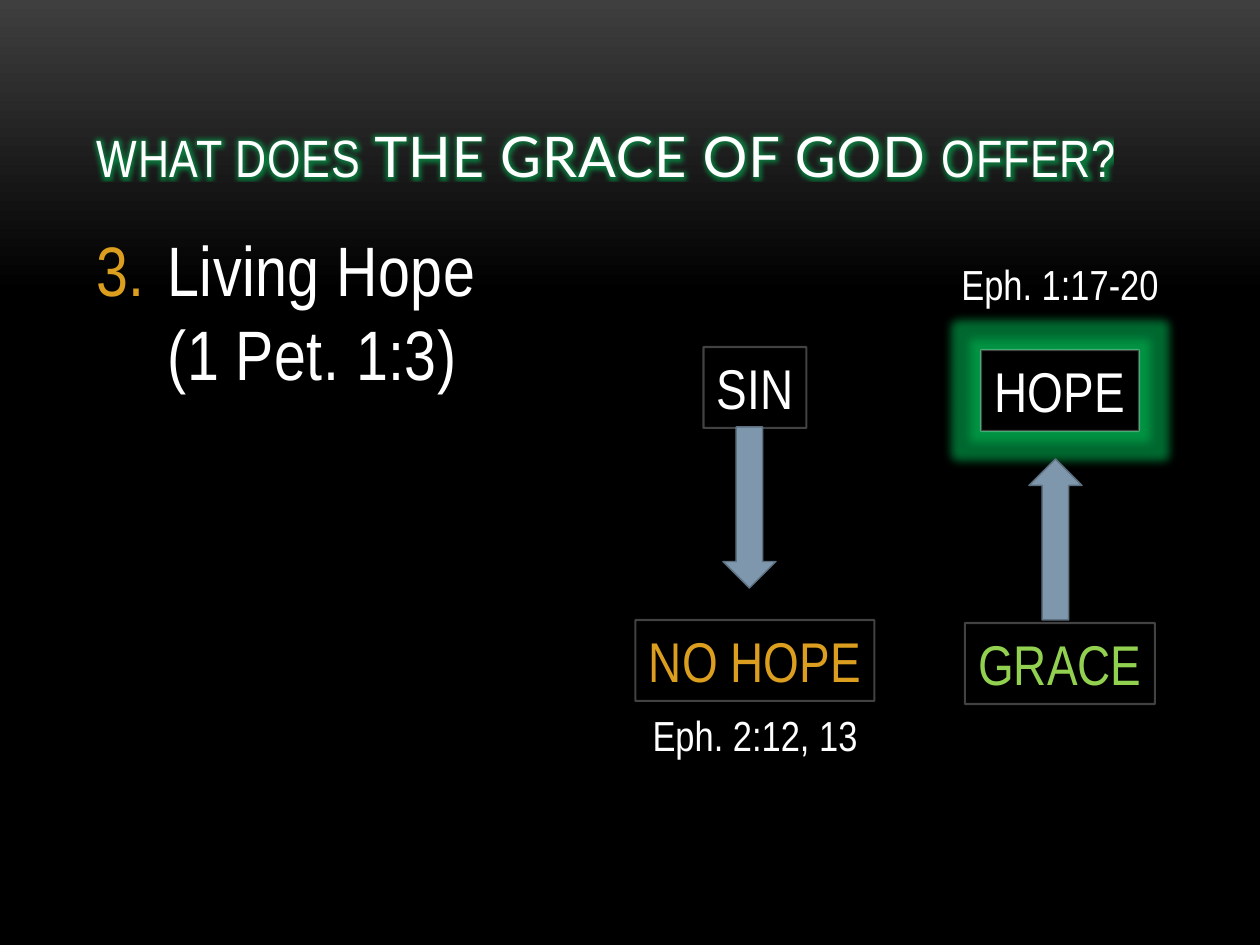
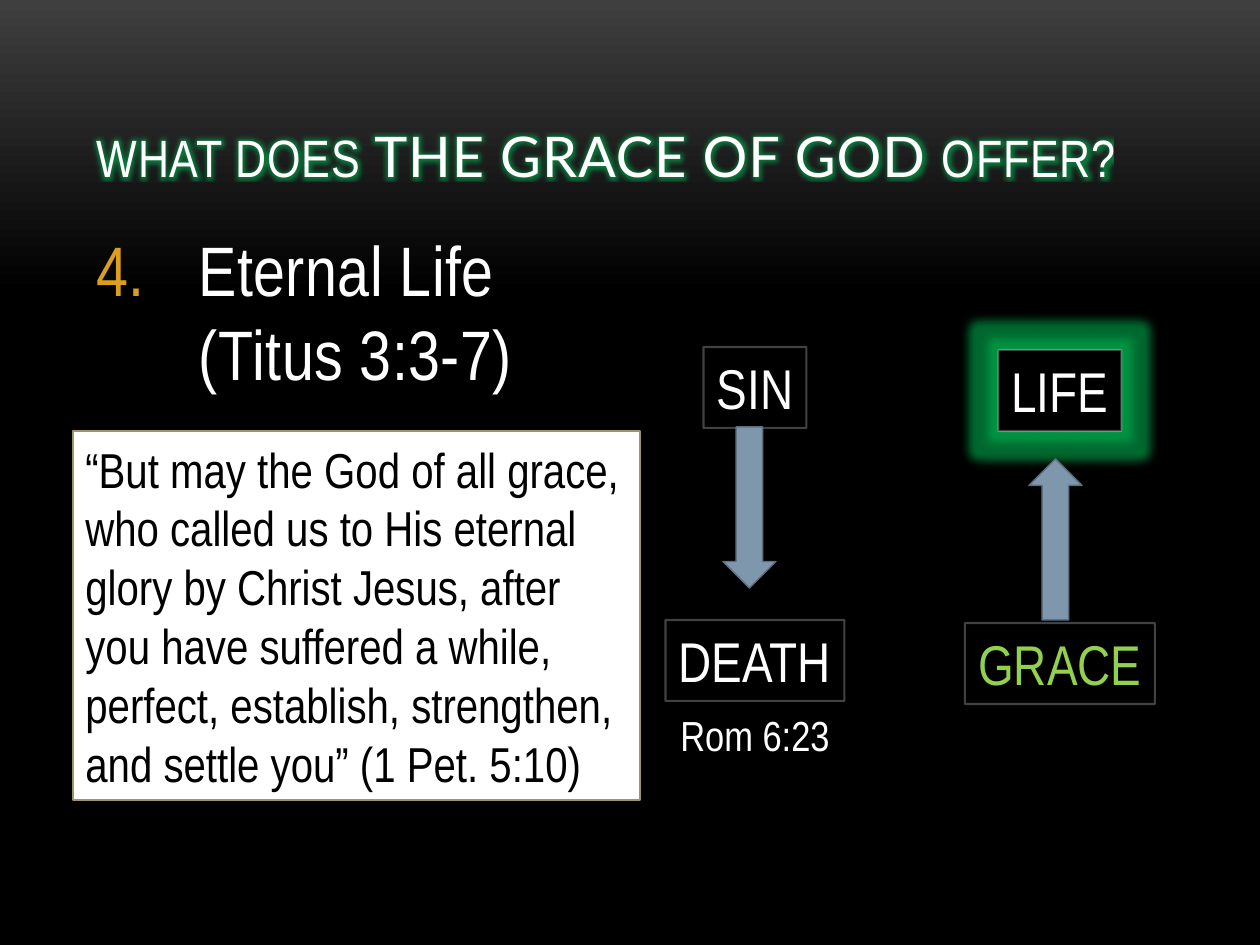
from lxml.etree import SubElement as Sub
from pptx import Presentation
from pptx.dml.color import RGBColor as RGB
from pptx.enum.shapes import MSO_SHAPE as Geo
from pptx.enum.text import MSO_ANCHOR as Anchor, MSO_AUTO_SIZE as Auto, PP_ALIGN as Align
from pptx.oxml.ns import qn
from pptx.util import Emu, Pt

PX = 914400 / 126
WHITE = RGB(0xFF, 0xFF, 0xFF)
BLACK = RGB(0x00, 0x00, 0x00)
GRAY = RGB(0x3F, 0x3F, 0x3F)
GOLD = RGB(0xDC, 0x9E, 0x1F)
LIME = RGB(0x92, 0xD0, 0x50)
GREEN = RGB(0x00, 0xB0, 0x50)
STEEL = RGB(0x7E, 0x97, 0xAD)
SLATE = RGB(0x5D, 0x70, 0x80)
SAND = RGB(0x9D, 0x93, 0x6F)
FACE = "Arial Narrow"
LEFT, RIGHT = 755, 1060


def px(*nums):
    return [Emu(round(n * PX)) for n in nums]


def glow(effect, rad):
    node = Sub(effect, qn("a:glow"), rad=str(Pt(rad)))
    tint = Sub(node, qn("a:srgbClr"), val=str(GREEN))
    Sub(tint, qn("a:alpha"), val="60000")


prs = Presentation()
prs.slide_width, prs.slide_height = px(1260, 945)

fill = prs.slide_master.background.fill
fill.gradient()
fill.gradient_angle = 270
for stop, color, pos in zip(fill.gradient_stops, (GRAY, BLACK), (0, 0.31)):
    stop.color.rgb = color
    stop.position = pos

layout = prs.slide_layouts[1]
areas = ((84, 38, 1092, 157), Anchor.BOTTOM), ((84, 220, 557, 567), Anchor.TOP)
for holder, (area, anchor) in zip(layout.placeholders, areas):
    holder.left, holder.top, holder.width, holder.height = px(*area)
    holder.text_frame.vertical_anchor = anchor
    holder.text_frame.auto_size = Auto.NONE

TITLE = [("WHAT DOES ", 30, FACE), ("THE GRACE OF GOD ", 32, "Lato"), ("OFFER?", 30, FACE)]
QUOTE = ("“But may the God of all grace, who called us to His eternal glory by Christ Jesus, "
         "after you have suffered a while, perfect, establish, strengthen, and settle you” "
         "(1 Pet. 5:10)")
SLIDES = [
    dict(start=3, indent=71, lines=("Living Hope ", "(1 Pet. 1:3)"),
         low=("NO HOPE", 239, GOLD), high=("HOPE", 158),
         notes=[("Eph. 2:12, 13", LEFT, 703, 233), ("Eph. 1:17-20", RIGHT, 252, 226)],
         quote=None),
    dict(start=4, indent=102, lines=("Eternal Life ", "(Titus 3:3-7)"),
         low=("DEATH", 179, WHITE), high=("LIFE", 123),
         notes=[("Rom 6:23", LEFT, 703, 176)],
         quote=QUOTE),
]

for data in SLIDES:
    slide = prs.slides.add_slide(layout)
    shapes = slide.shapes
    title, body = slide.placeholders

    para = title.text_frame.paragraphs[0]
    para.alignment = Align.LEFT
    para.font.color.rgb = WHITE
    for text, size, face in TITLE:
        run = para.add_run()
        run.text = text
        run.font.size = Pt(size)
        run.font.name = face
        props = run.font._element
        props.set("spc", "50")
        effect = Sub(props, qn("a:effectLst"))
        props.insert(0, effect)
        glow(effect, 5)

    para = body.text_frame.paragraphs[0]
    first, last = data["lines"]
    para.add_run().text = first
    para.add_line_break()
    para.add_run().text = last
    para.space_before = Pt(0)
    para.space_after = Pt(6)
    props = para._p.get_or_add_pPr()
    hang = px(data["indent"])[0]
    props.set("marL", str(hang))
    props.set("indent", str(-hang))
    Sub(Sub(props, qn("a:buClr")), qn("a:srgbClr"), val=str(GOLD))
    Sub(props, qn("a:buFont"), typeface=FACE)
    Sub(props, qn("a:buAutoNum"), type="arabicPeriod", startAt=str(data["start"]))
    para.font.size = Pt(40)
    para.font.name = FACE
    para.font.color.rgb = WHITE
    para.font._element.set("spc", "30")

    boxes = [
        ("SIN", LEFT, 347, 103, WHITE, False),
        (data["low"][0], LEFT, 620, data["low"][1], data["low"][2], False),
        (data["high"][0], RIGHT, 350, data["high"][1], WHITE, True),
        ("GRACE", RIGHT, 623, 190, LIME, False),
    ]
    for text, mid, top, width, color, lit in boxes:
        box = shapes.add_shape(Geo.RECTANGLE, *px(mid - width / 2, top, width, 81))
        box.shadow.inherit = False
        box.fill.solid()
        box.fill.fore_color.rgb = BLACK
        box.line.color.rgb = WHITE
        box.line.width = Pt(1.2)
        tint = box.line._ln.find(".//" + qn("a:srgbClr"))
        Sub(tint, qn("a:alpha"), val="25000")
        if lit:
            glow(box._element.spPr.find(qn("a:effectLst")), 11)
        frame = box.text_frame
        frame.word_wrap = False
        frame.auto_size = Auto.SHAPE_TO_FIT_TEXT
        para = frame.paragraphs[0]
        para.text = text
        para.alignment = Align.CENTER
        para.font.size = Pt(32)
        para.font.name = FACE
        para.font.color.rgb = color

    for geo, left, top in ((Geo.DOWN_ARROW, 723, 427), (Geo.UP_ARROW, 1029, 459)):
        arrow = shapes.add_shape(geo, *px(left, top, 53, 161))
        arrow.shadow.inherit = False
        arrow.fill.solid()
        arrow.fill.fore_color.rgb = STEEL
        arrow.line.color.rgb = SLATE
        arrow.line.width = Pt(0.85)

    for text, mid, top, width in data["notes"]:
        note = shapes.add_textbox(*px(mid - width / 2, top, width, 63))
        note.text_frame.word_wrap = False
        note.text_frame.auto_size = Auto.SHAPE_TO_FIT_TEXT
        para = note.text_frame.paragraphs[0]
        para.text = text
        para.alignment = Align.CENTER
        para.font.size = Pt(24)
        para.font.name = FACE
        para.font.color.rgb = WHITE

    if data["quote"]:
        card = shapes.add_shape(Geo.RECTANGLE, *px(73, 431, 567, 369))
        card.shadow.inherit = False
        card.fill.solid()
        card.fill.fore_color.rgb = WHITE
        card.line.color.rgb = SAND
        card.line.width = Pt(0.85)
        card.text_frame.word_wrap = True
        card.text_frame.auto_size = Auto.SHAPE_TO_FIT_TEXT
        para = card.text_frame.paragraphs[0]
        para.text = data["quote"]
        para.alignment = Align.LEFT
        para.font.size = Pt(28)
        para.font.name = FACE
        para.font.color.rgb = BLACK

prs.save("out.pptx")
